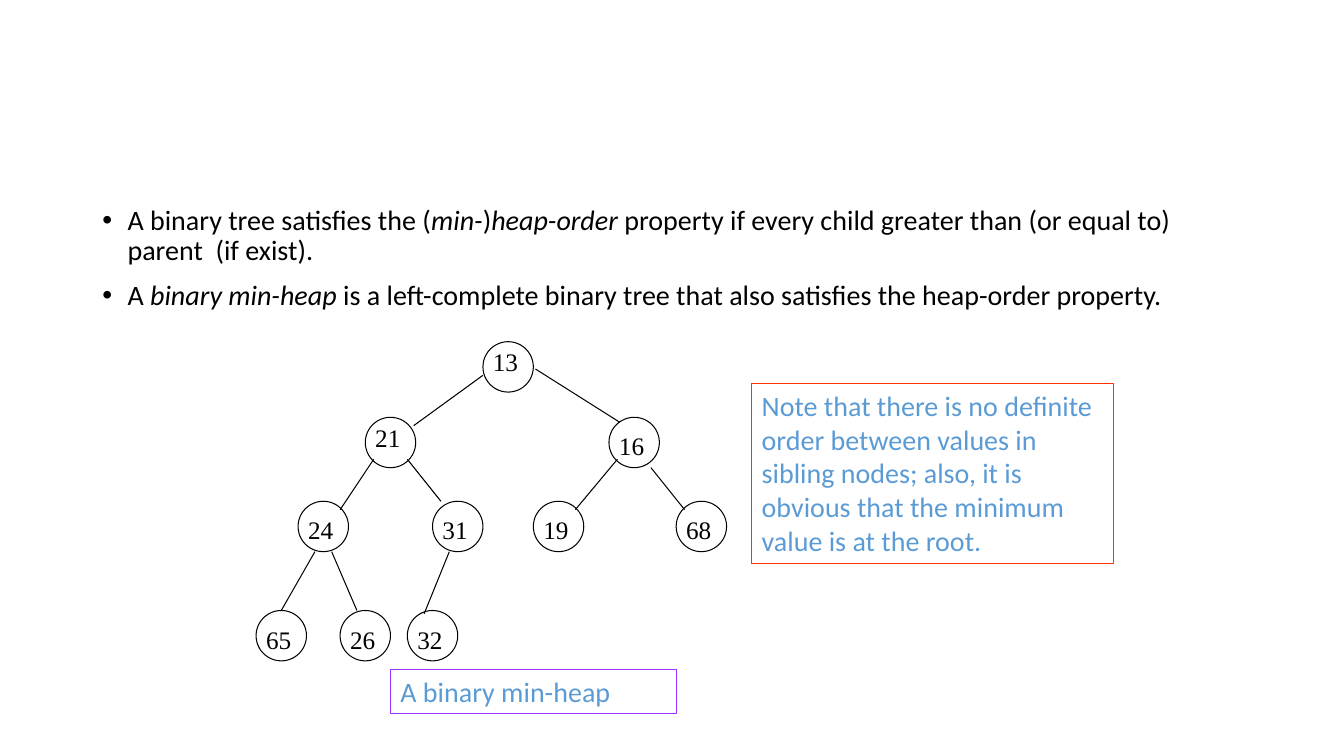
from pptx import Presentation
from pptx.dml.color import RGBColor
from pptx.enum.shapes import MSO_CONNECTOR, MSO_SHAPE
from pptx.enum.text import MSO_ANCHOR, MSO_AUTO_SIZE, PP_ALIGN
from pptx.oxml.ns import qn
from pptx.util import Inches, Pt
from lxml import etree

OVAL, RECT = MSO_SHAPE.OVAL, MSO_SHAPE.RECTANGLE
LINE = MSO_CONNECTOR.STRAIGHT
TOP, LEFT, FIXED = MSO_ANCHOR.TOP, PP_ALIGN.LEFT, MSO_AUTO_SIZE.NONE

BLACK = RGBColor(0x00, 0x00, 0x00)
BLUE = RGBColor(0x5B, 0x9B, 0xD5)
RED = RGBColor(0xFF, 0x33, 0x00)
PURPLE = RGBColor(0x99, 0x33, 0xFF)

# Grid of 1/12 inch, with its origin at the tree's top left corner
STEP, X0, Y0 = 1 / 12, 2.54, 3.39
SIZE = 6  # node diameter in grid steps

# Value, column, row, label drop
NODES = [
    (13, 27, 0, 0),
    (21, 13, 9, 0), (16, 42, 9, 1),
    (24, 5, 19, 1), (31, 21, 19, 1), (19, 33, 19, 1), (68, 50, 19, 1),
    (65, 0, 32, 1), (26, 10, 32, 1), (32, 18, 32, 1),
]

# Column and row of the start, then of the end
EDGES = [
    (27, 4, 18.75, 10), (33.25, 3.25, 43.3, 9.6),
    (14, 14, 10, 20), (18, 14, 22, 19),
    (43, 14, 38, 20), (47, 15, 51, 20),
    (7, 25, 3, 32), (9, 25, 12, 32), (23, 25, 20, 32.4),
]

# Runs as (text, italic)
POINTS = [
    [("A binary tree satisfies the (", False), ("min-", True), (")", False),
     ("heap-order ", True),
     ("property if every child greater than (or equal to) parent  (if exist).",
      False)],
    [("A ", False), ("binary min-heap", True),
     (" is a left-complete binary tree that also satisfies the heap-order "
      "property.", False)],
]
NOTE = ("Note that there is no definite order between values in sibling nodes; "
        "also, it is obvious that the minimum value is at the root.")


def write(frame, paras, font="Calibri", size=20, color=BLACK, bullet=None,
          lead=1.0, gap=0):
    frame.word_wrap, frame.auto_size = True, FIXED
    frame.vertical_anchor = TOP
    for i, runs in enumerate(paras):
        para = frame.add_paragraph() if i else frame.paragraphs[0]
        para.alignment, para.line_spacing = LEFT, lead
        para.space_before = Pt(gap if i else 0)
        if bullet:
            props = para._p.get_or_add_pPr()
            props.set("marL", str(Inches(0.25)))
            props.set("indent", str(Inches(-0.25)))
            etree.SubElement(props, qn("a:buFont")).set("typeface", "Arial")
            etree.SubElement(props, qn("a:buChar")).set("char", bullet)
        for text, slant in runs:
            run = para.add_run()
            run.text = text
            face = run.font
            face.name, face.size, face.italic = font, Pt(size), slant
            face.color.rgb = color


class Board:
    def __init__(self, slide, weight=0.75):
        self.slide, self.shapes = slide, slide.shapes
        self.weight = Pt(weight)

    def spot(self, col, row):
        return Inches(X0 + col * STEP), Inches(Y0 + row * STEP)

    def area(self, col, row, wide, high):
        return *self.spot(col, row), Inches(wide * STEP), Inches(high * STEP)

    def body(self, paras, *cells):
        box = self.slide.placeholders[1]
        box.left, box.top, box.width, box.height = self.area(*cells)
        write(box.text_frame, paras, bullet="•", lead=0.9, gap=10)

    def shape(self, kind, *cells, color=BLACK):
        item = self.shapes.add_shape(kind, *self.area(*cells))
        item.shadow.inherit = False
        item.fill.background()
        item.line.color.rgb, item.line.width = color, self.weight
        return item

    def panel(self, text, *cells, color):
        box = self.shape(RECT, *cells, color=color)
        write(box.text_frame, [[(text, False)]], color=BLUE)

    def label(self, value, col, row):
        box = self.shapes.add_textbox(*self.area(col, row, 8, 4.8))
        write(box.text_frame, [[(str(value), False)]],
              font="Times New Roman", size=18)

    def edge(self, col, row, col2, row2):
        link = self.shapes.add_connector(
            LINE, *self.spot(col, row), *self.spot(col2, row2))
        link.line.color.rgb, link.line.width = BLACK, self.weight
        etree.SubElement(link._element.spPr, qn("a:effectLst"))


def main():
    deck = Presentation()
    deck.slide_width, deck.slide_height = Inches(13.33), Inches(7.5)
    slide = deck.slides.add_slide(deck.slide_layouts[1])
    title = slide.shapes.title.element
    title.getparent().remove(title)
    board = Board(slide)

    # Definitions
    board.body(POINTS, -19.5, -16.7, 138, 57.1)

    # Heap tree
    for _, col, row, _ in NODES:
        board.shape(OVAL, col, row, SIZE, SIZE)
    for value, col, row, drop in NODES:
        board.label(value, col, row + drop)
    for ends in EDGES:
        board.edge(*ends)

    # Note and caption
    board.panel(NOTE, 59, 5, 43, 21.4, color=RED)
    board.panel("A binary min-heap", 16, 39, 34, 5.3, color=PURPLE)

    deck.save("out.pptx")


if __name__ == "__main__":
    main()
